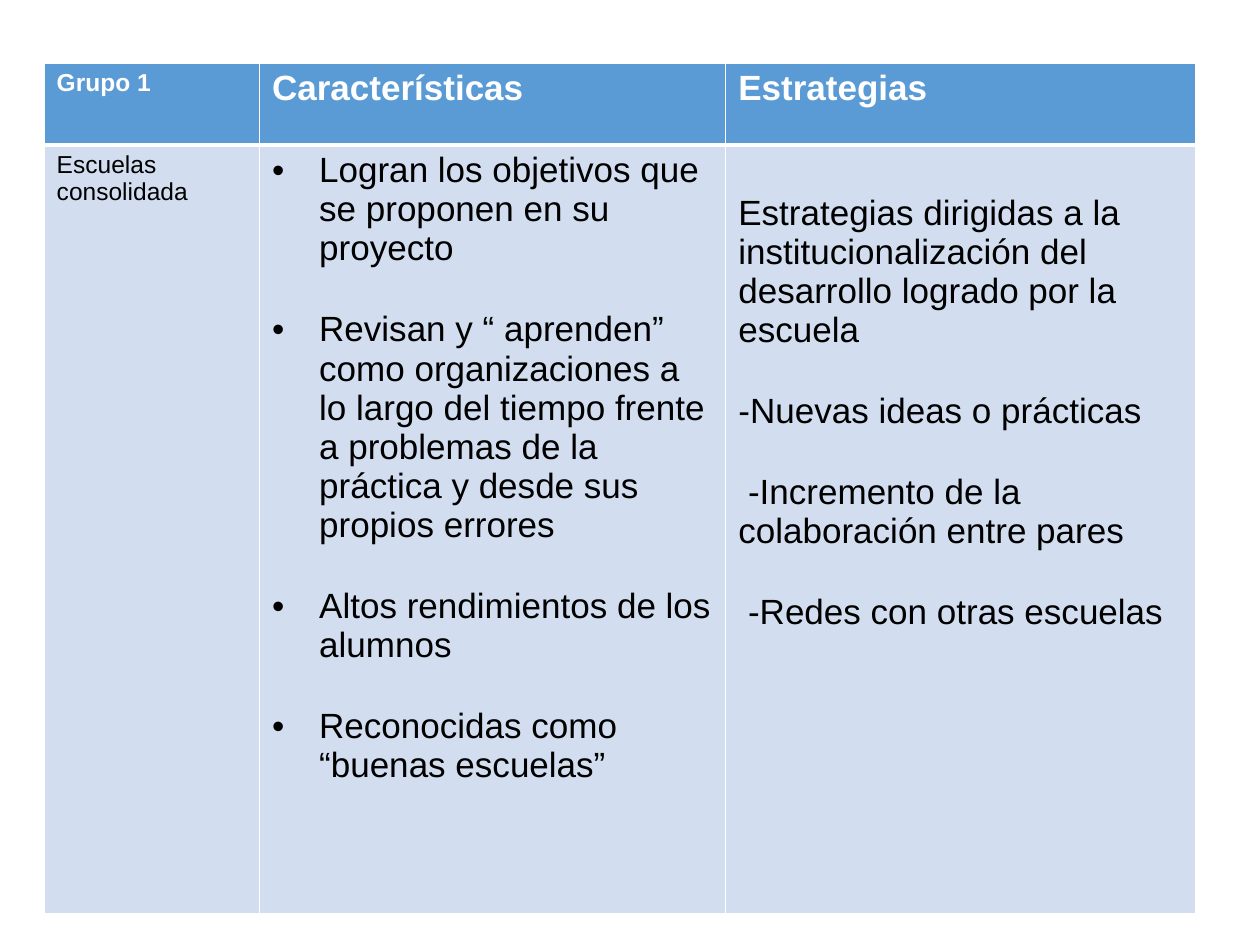
"""Build a slide with a table of traits and strategies of consolidated schools."""
from lxml import etree
from pptx import Presentation
from pptx import util as u
from pptx.dml.color import RGBColor
from pptx.oxml.ns import qn

HUES = {"head": "5B9BD5", "body": "D2DEEF", "white": "FFFFFF", "black": "000000"}
FONT = "Arial"
COLS = (4.34, 9.4, 9.47)
ROWS = (1.65, 15.5)
GAP = 24
HEADS = (("Grupo 1", 14), ("Características", 20), ("Estrategias", 20))
GROUP = ("Escuelas", "consolidada")
TRAITS = (
    "Logran los objetivos que se proponen en su proyecto",
    "Revisan y “ aprenden” como organizaciones a lo largo del tiempo frente "
    "a problemas de la práctica y desde sus propios errores",
    "Altos rendimientos de los alumnos",
    "Reconocidas como “buenas escuelas”",
)
PLANS = (
    "Estrategias dirigidas a la institucionalización del desarrollo logrado por la escuela",
    "-Nuevas ideas o prácticas",
    " -Incremento de la colaboración entre pares",
    " -Redes con otras escuelas",
)


def add_edge(cell, side, width):
    """Draw one white border of a cell."""
    props = cell._tc.get_or_add_tcPr()
    line = etree.SubElement(props, qn(f"a:ln{side}"), w=str(u.Pt(width)))
    fill = etree.SubElement(line, qn("a:solidFill"))
    etree.SubElement(fill, qn("a:srgbClr"), val=HUES["white"])


def style_cell(cell, hue, edges):
    """Give a cell its borders and fill."""
    for side, width in edges.items():
        add_edge(cell, side, width)
    cell.fill.solid()
    cell.fill.fore_color.rgb = RGBColor.from_string(HUES[hue])


def add_dot(para):
    """Give a paragraph a bullet with a hanging indent."""
    props = para._p.get_or_add_pPr()
    props.set("marL", str(u.Cm(0.95)))
    props.set("indent", str(u.Cm(-0.95)))
    font = etree.SubElement(props, qn("a:buFont"))
    font.set("typeface", FONT)
    etree.SubElement(props, qn("a:buChar")).set("char", "•")


def add_text(cell, lines, size, hue="black", bold=False, gap=0, dots=False):
    """Write lines into a cell, one paragraph each."""
    frame = cell.text_frame
    for i, line in enumerate(lines):
        para = frame.add_paragraph() if i else frame.paragraphs[0]
        para.space_before = u.Pt(gap if i else 0)
        if dots:
            add_dot(para)
        run = para.add_run()
        run.text = line
        run.font.name = FONT
        run.font.size = u.Pt(size)
        run.font.bold = bold
        run.font.color.rgb = RGBColor.from_string(HUES[hue])


def add_grid(slide):
    """Add the empty styled table and return it."""
    frame = slide.shapes.add_table(
        len(ROWS), len(COLS), u.Cm(0.89), u.Cm(1.27), u.Cm(sum(COLS)), u.Cm(sum(ROWS))
    )
    table = frame.table
    for col, width in zip(table.columns, COLS):
        col.width = u.Cm(width)
    for row, height in zip(table.rows, ROWS):
        row.height = u.Cm(height)
    for cell in table.rows[0].cells:
        style_cell(cell, "head", {"L": 1, "R": 1, "T": 1, "B": 3})
    for cell in table.rows[1].cells:
        style_cell(cell, "body", {"L": 1, "R": 1, "B": 1})
    return table


def main():
    """Build and save the slide."""
    deck = Presentation()
    deck.slide_width, deck.slide_height = u.Cm(25.4), u.Cm(19.05)
    slide = deck.slides.add_slide(deck.slide_layouts[6])
    table = add_grid(slide)
    for cell, (label, size) in zip(table.rows[0].cells, HEADS):
        add_text(cell, [label], size, "white", bold=True)
    group, traits, plans = table.rows[1].cells
    add_text(group, GROUP, 14)
    add_text(traits, TRAITS, 20, gap=GAP, dots=True)
    plans.margin_top = u.Cm(0.99)
    add_text(plans, PLANS, 20, gap=GAP)
    deck.save("out.pptx")


if __name__ == "__main__":
    main()
